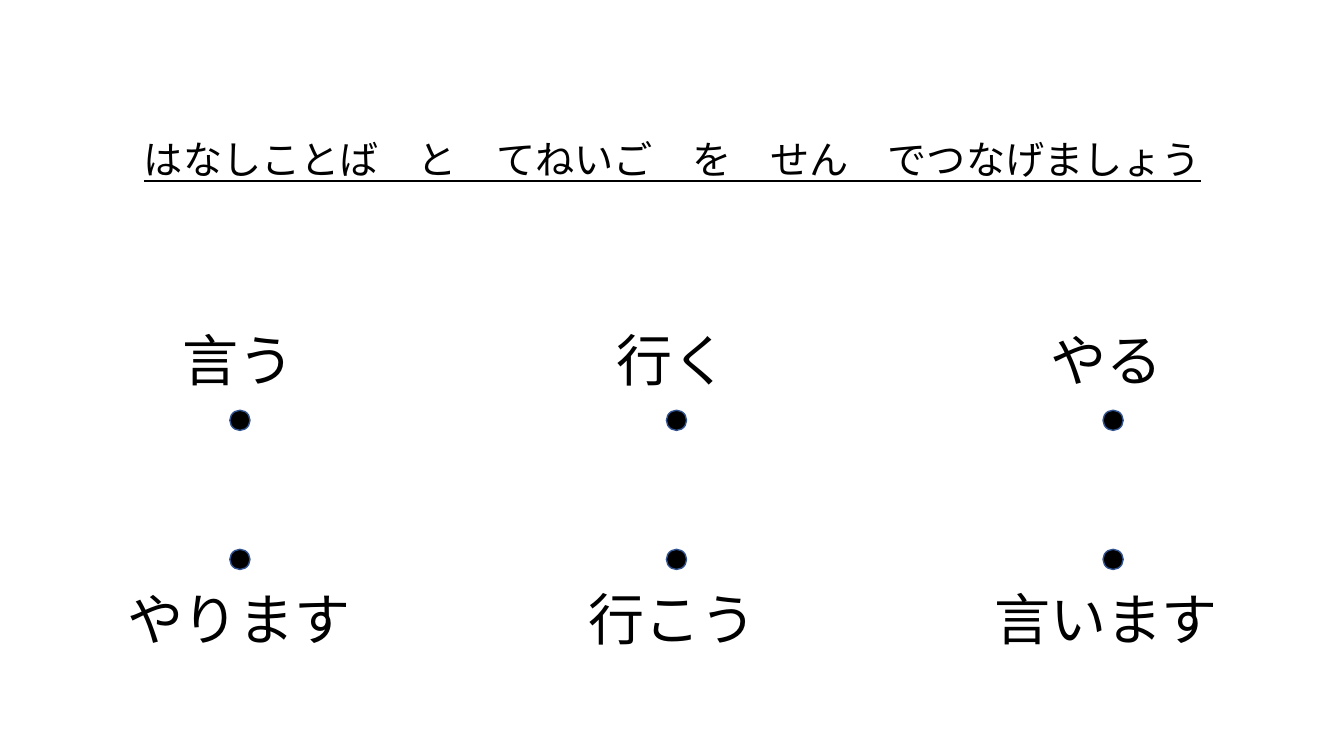
from dataclasses import dataclass

from lxml.etree import SubElement
from pptx import Presentation
from pptx.dml.color import RGBColor
from pptx.enum.shapes import MSO_SHAPE
from pptx.enum.text import MSO_AUTO_SIZE, PP_ALIGN
from pptx.oxml.ns import qn
from pptx.util import Inches, Pt


@dataclass(frozen=True)
class Theme:
    font: str = "Noto Sans CJK JP"
    ink: RGBColor = RGBColor(0x00, 0x00, 0x00)
    dot_outline: RGBColor = RGBColor(0x32, 0x54, 0x91)
    title_size: int = 28
    word_size: int = 40


THEME = Theme()

TITLE = "はなしことば　と　てねいご　を　せん　でつなげましょう"
# Each row: word top, dot top, words from left to right
ROWS = [
    (3.18, 4.07, ["言う", "行く", "やる"]),
    (5.75, 5.45, ["やります", "行こう", "言います"]),
]
WORD_LEFT, WORD_STEP = 0.9, 4.3
WORD_WIDTH, WORD_HEIGHT = 2.94, 0.77
DOT_LEFT, DOT_STEP, DOT_SIZE = 2.28, 4.33, 0.2


def add_text(slide, text, left, top, width, height, size):
    """Add a centred text box and return it."""
    box = slide.shapes.add_textbox(
        Inches(left), Inches(top), Inches(width), Inches(height)
    )
    box.text_frame.word_wrap = True
    para = box.text_frame.paragraphs[0]
    para.text = text
    para.alignment = PP_ALIGN.CENTER
    para.font.size = Pt(size)
    para.font.color.rgb = THEME.ink
    para.font.name = THEME.font
    # Japanese characters take their typeface from the East Asian font
    defaults = para._p.pPr.find(qn("a:defRPr"))
    SubElement(defaults, qn("a:ea"), typeface=THEME.font)
    return box


def add_title(slide):
    box = add_text(slide, TITLE, 1.05, 1.35, 11.24, 1, THEME.title_size)
    para = box.text_frame.paragraphs[0]
    para.font.underline = True
    para.line_spacing = 0.9
    para.space_before = Pt(10)


def add_word(slide, word, left, top):
    box = add_text(slide, word, left, top, WORD_WIDTH, WORD_HEIGHT, THEME.word_size)
    box.text_frame.auto_size = MSO_AUTO_SIZE.SHAPE_TO_FIT_TEXT


def add_dot(slide, left, top):
    dot = slide.shapes.add_shape(
        MSO_SHAPE.FLOWCHART_CONNECTOR,
        Inches(left), Inches(top), Inches(DOT_SIZE), Inches(DOT_SIZE),
    )
    dot.shadow.inherit = False
    dot.fill.solid()
    dot.fill.fore_color.rgb = THEME.ink
    dot.line.color.rgb = THEME.dot_outline
    dot.line.width = Pt(1)


def main():
    deck = Presentation()
    deck.slide_width, deck.slide_height = Inches(13.33), Inches(7.5)
    slide = deck.slides.add_slide(deck.slide_layouts[6])

    add_title(slide)
    for word_top, dot_top, words in ROWS:
        for column, word in enumerate(words):
            add_word(slide, word, WORD_LEFT + column * WORD_STEP, word_top)
            add_dot(slide, DOT_LEFT + column * DOT_STEP, dot_top)

    deck.save("out.pptx")


if __name__ == "__main__":
    main()
